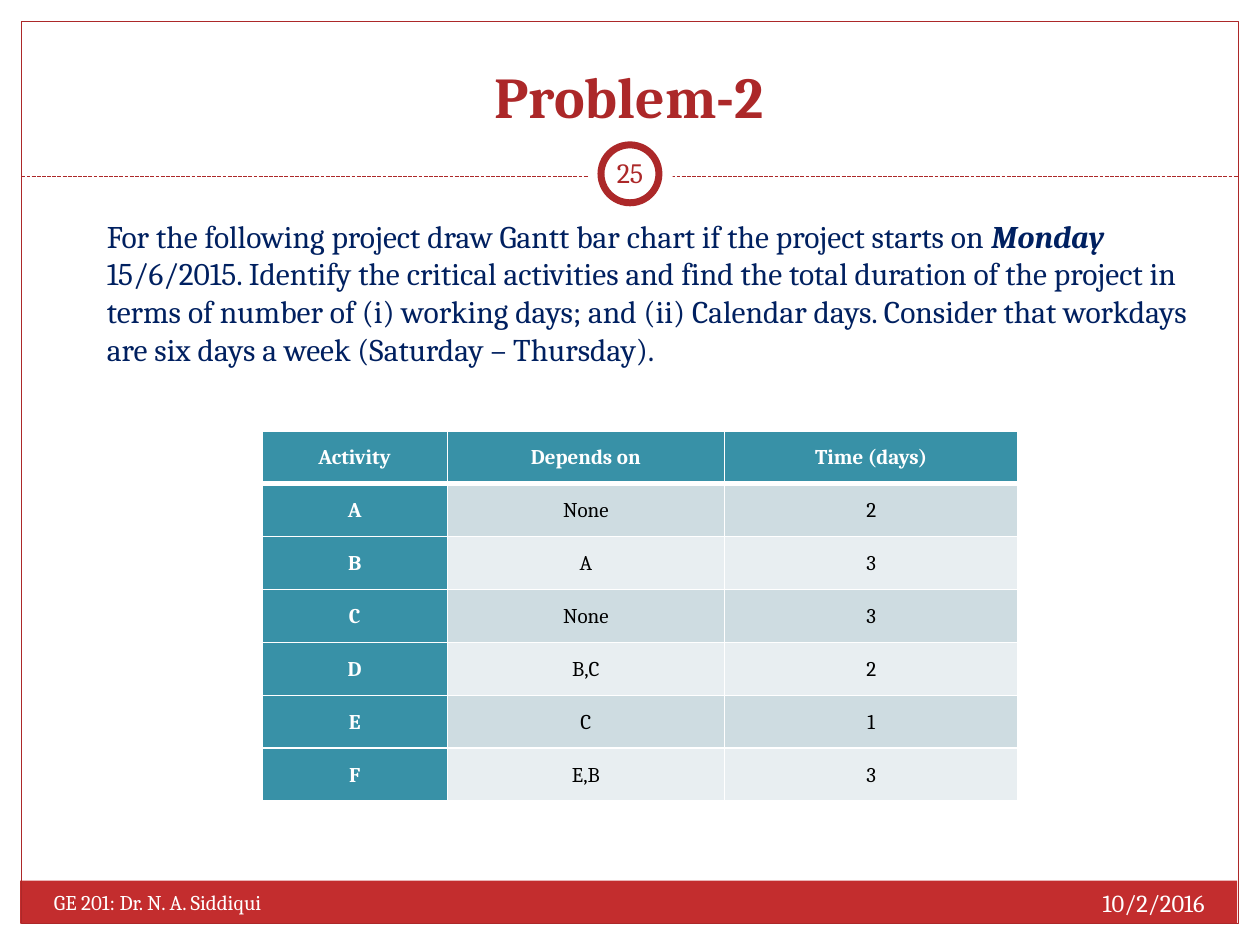
from lxml.etree import SubElement
from pptx import Presentation
from pptx.dml.color import RGBColor
from pptx.enum.dml import MSO_LINE
from pptx.enum.shapes import MSO_CONNECTOR, MSO_SHAPE
from pptx.enum.text import MSO_ANCHOR, MSO_AUTO_SIZE, PP_ALIGN
from pptx.oxml.ns import qn
from pptx.util import Inches, Pt

WHITE = RGBColor(0xFF, 0xFF, 0xFF)
BLACK = RGBColor(0x00, 0x00, 0x00)
RED = RGBColor(0xC3, 0x2D, 0x2E)
DARK_RED = RGBColor(0xAC, 0x28, 0x29)
NAVY = RGBColor(0x00, 0x20, 0x60)
TEAL = RGBColor(0x38, 0x91, 0xA7)
BAND_DARK = RGBColor(0xCE, 0xDC, 0xE1)
BAND_LIGHT = RGBColor(0xE8, 0xEE, 0xF1)

QUESTION = [
    ("For the following project draw Gantt bar chart if the project starts on ", False),
    ("Monday", True),
    (" 15/6/2015. Identify the critical activities and find the total duration "
     "of the project in terms of number of (i) working days; and (ii) Calendar "
     "days. Consider that workdays are six days a week (Saturday – Thursday).", False),
]
ACTIVITIES = [
    ("Activity", "Depends on", "Time (days)"),
    ("A", "None", "2"),
    ("B", "A", "3"),
    ("C", "None", "3"),
    ("D", "B,C", "2"),
    ("E", "C", "1"),
    ("F", "E,B", "3"),
]


def add_text(para, text, *, size, color, bold=False, italic=False, font="Cambria"):
    span = para.add_run()
    span.text = text
    span.font.name = font
    span.font.size = Pt(size)
    span.font.color.rgb = color
    span.font.bold = bold
    span.font.italic = italic


def set_borders(cell, **widths):
    """Draw white cell borders; the keys are L, R, T and B, in that order."""
    properties = cell._tc.get_or_add_tcPr()
    for index, (side, width) in enumerate(widths.items()):
        line = SubElement(properties, qn(f"a:ln{side}"), w=str(Pt(width)))
        fill = SubElement(line, qn("a:solidFill"))
        SubElement(fill, qn("a:srgbClr"), val=str(WHITE))
        properties.insert(index, line)


class SlideBuilder:
    def __init__(self, page):
        self.page = page

    def shape(self, kind, left, top, width, height, fill=None, line=None, weight=0.75):
        shape = self.page.shapes.add_shape(
            kind, Inches(left), Inches(top), Inches(width), Inches(height))
        shape.shadow.inherit = False
        if fill is None:
            shape.fill.background()
        else:
            shape.fill.solid()
            shape.fill.fore_color.rgb = fill
        if line is None:
            shape.line.fill.background()
        else:
            shape.line.color.rgb = line
            shape.line.width = Pt(weight)

    def dashed_line(self, left, right, y):
        line = self.page.shapes.add_connector(
            MSO_CONNECTOR.STRAIGHT, Inches(left), Inches(y), Inches(right), Inches(y))
        line.line.color.rgb = DARK_RED
        line.line.width = Pt(0.75)
        line.line.dash_style = MSO_LINE.SQUARE_DOT
        SubElement(line._element.spPr, qn("a:effectLst"))

    def title(self, text, left, top, width, height):
        title = self.page.shapes.title
        title.left, title.top = Inches(left), Inches(top)
        title.width, title.height = Inches(width), Inches(height)
        frame = title.text_frame
        frame.auto_size = MSO_AUTO_SIZE.NONE
        frame.vertical_anchor = MSO_ANCHOR.BOTTOM
        para = frame.paragraphs[0]
        para.alignment = PP_ALIGN.CENTER
        add_text(para, text, size=33, color=DARK_RED, bold=True)

    def text(self, spans, left, top, width, height, *, size, color,
             align=PP_ALIGN.LEFT, anchor=MSO_ANCHOR.TOP, inset=None):
        box = self.page.shapes.add_textbox(
            Inches(left), Inches(top), Inches(width), Inches(height))
        frame = box.text_frame
        frame.word_wrap = True
        frame.vertical_anchor = anchor
        if inset is not None:
            frame.margin_left = frame.margin_right = Inches(inset)
            frame.margin_top = frame.margin_bottom = Inches(inset)
        para = frame.paragraphs[0]
        para.alignment = align
        for text, strong in spans:
            add_text(para, text, size=size, color=color, bold=strong, italic=strong)

    def table(self, rows, left, top, widths, row_height):
        table = self.page.shapes.add_table(
            len(rows), len(widths), Inches(left), Inches(top),
            Inches(sum(widths)), Inches(row_height * len(rows))).table
        for column, width in zip(table.columns, widths):
            column.width = Inches(width)
        for r, values in enumerate(rows):
            table.rows[r].height = Inches(row_height)
            for c, value in enumerate(values):
                self.cell(table.cell(r, c), value, r, c)

    def cell(self, cell, text, row, column):
        heading = row == 0 or column == 0
        cell.fill.solid()
        cell.fill.fore_color.rgb = (
            TEAL if heading else BAND_DARK if row % 2 else BAND_LIGHT)
        set_borders(cell, L=1, R=1, T=3 if row == 1 else 1, B=3 if row == 0 else 1)
        cell.vertical_anchor = MSO_ANCHOR.MIDDLE
        cell.margin_left = cell.margin_right = Inches(0.04)
        cell.margin_top, cell.margin_bottom = Inches(0.01), 0
        para = cell.text_frame.paragraphs[0]
        para.alignment = PP_ALIGN.CENTER
        add_text(para, text, size=12, color=WHITE if heading else BLACK, bold=heading)


def main():
    deck = Presentation()
    deck.slide_width, deck.slide_height = Inches(10), Inches(7.5)
    slide = SlideBuilder(deck.slides.add_slide(deck.slide_layouts[5]))

    # Footer band, frame and divider with the number ring
    slide.shape(MSO_SHAPE.RECTANGLE, 0.16, 6.99, 9.66, 0.34, fill=RED)
    slide.shape(MSO_SHAPE.RECTANGLE, 0.17, 0.17, 9.66, 7.16, line=DARK_RED)
    slide.dashed_line(0.17, 9.83, 1.4)
    slide.shape(MSO_SHAPE.OVAL, 4.67, 1.05, 0.67, 0.67, fill=WHITE)
    slide.shape(MSO_SHAPE.OVAL, 4.77, 1.15, 0.46, 0.46, fill=WHITE,
                line=DARK_RED, weight=4)

    # Title, footer texts and slide number
    slide.title("Problem-2", 0.33, 0.25, 9.33, 0.83)
    slide.text([("10/2/2016", False)], 6.33, 7, 3.33, 0.4,
               size=14, color=WHITE, align=PP_ALIGN.RIGHT)
    slide.text([("GE 201: Dr. N. A. Siddiqui", False)], 0.33, 7.01, 3.92, 0.4,
               size=12, color=WHITE)
    slide.text([("25", False)], 4.75, 1.13, 0.5, 0.48, size=16, color=DARK_RED,
               align=PP_ALIGN.CENTER, anchor=MSO_ANCHOR.MIDDLE, inset=0.05)

    # Question and activity table
    slide.text(QUESTION, 0.75, 1.67, 8.83, 1.31, size=18, color=NAVY)
    slide.table(ACTIVITIES, 2.08, 3.42, (1.47, 2.2, 2.33), 0.42)

    deck.save("out.pptx")


if __name__ == "__main__":
    main()
